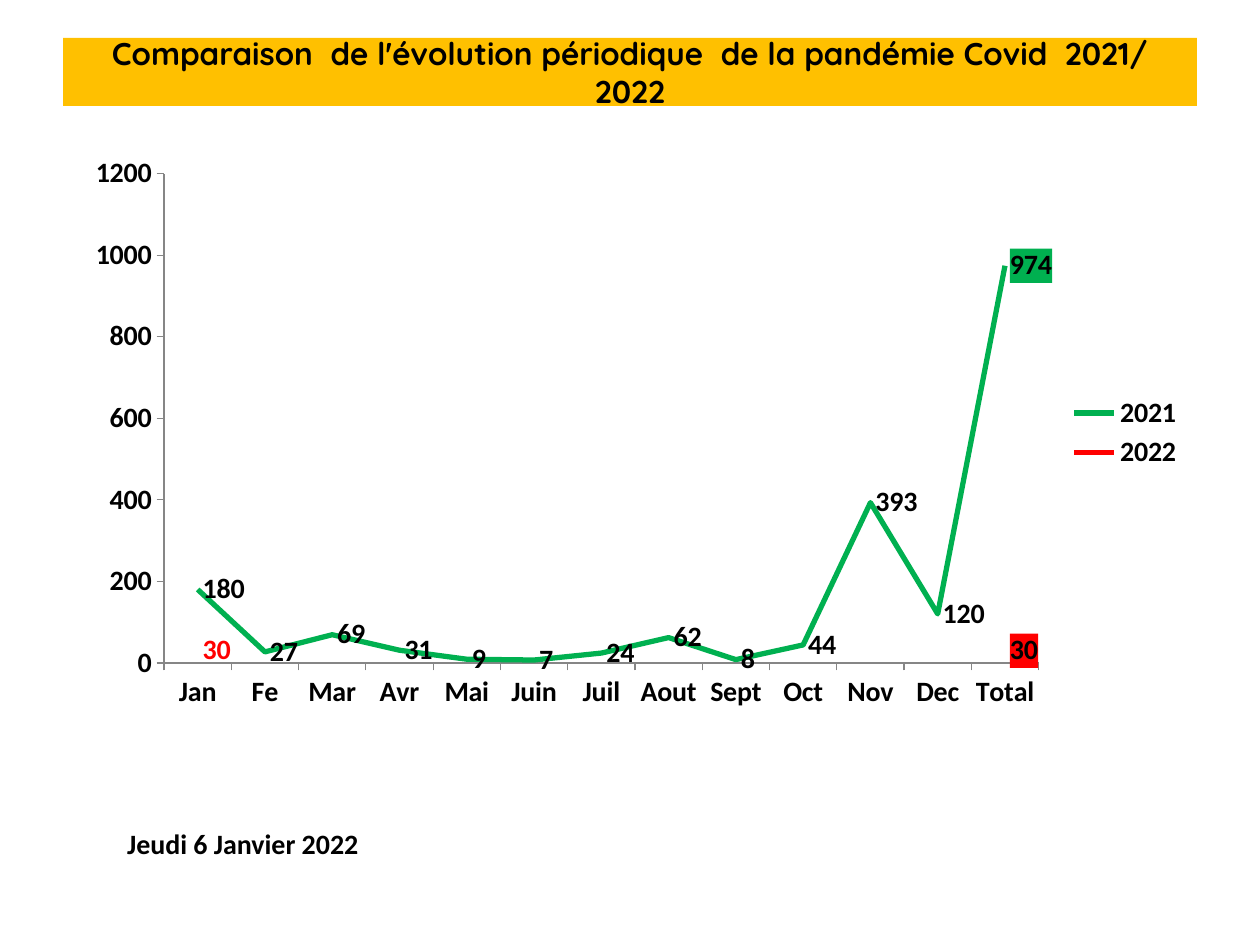
"""Build a slide with a line chart of monthly Covid cases, 2021 against 2022."""
from lxml.etree import SubElement
from pptx import Presentation
from pptx.chart.data import CategoryChartData
from pptx.dml.color import RGBColor
from pptx.enum.chart import (XL_CHART_TYPE, XL_LABEL_POSITION,
                             XL_LEGEND_POSITION, XL_MARKER_STYLE, XL_TICK_MARK)
from pptx.enum.text import MSO_ANCHOR, MSO_AUTO_SIZE, PP_ALIGN
from pptx.oxml import parse_xml
from pptx.oxml.ns import nsdecls, qn
from pptx.util import Pt

TITLE = "Comparaison  de l'évolution périodique  de la pandémie Covid  2021/ 2022"
DATE = "Jeudi 6 Janvier 2022"
MONTHS = ["Jan", "Fe", "Mar", "Avr", "Mai", "Juin", "Juil", "Aout", "Sept",
          "Oct", "Nov", "Dec", "Total"]
LAST = len(MONTHS) - 1
SERIES = [
    ("2021", [180, 27, 69, 31, 9, 7, 24, 62, 8, 44, 393, 120, 974], "00B050", "000000"),
    ("2022", [30] + [None] * (LAST - 1) + [30], "FF0000", "FF0000"),
]
PLOT = {"x": 0.08, "y": 0.05, "w": 0.78, "h": 0.85}
BODY = {"name": "Calibri", "size": Pt(16), "bold": True}
HEAD = {"name": "Quicksand", "size": Pt(18), "bold": True}


def tint(color, code):
    color.rgb = RGBColor.from_string(code)


def style(font, look, code="000000"):
    for key, value in look.items():
        setattr(font, key, value)
    tint(font.color, code)


def place(shape, *box):
    for key, value in zip(("left", "top", "width", "height"), box):
        setattr(shape, key, Pt(value))


def add_title(slide):
    shape = slide.shapes.title
    place(shape, 36, 21.6, 648, 38.9)
    shape.fill.solid()
    tint(shape.fill.fore_color, "FFC000")
    frame = shape.text_frame
    frame.text = TITLE
    frame.word_wrap = True
    frame.auto_size = MSO_AUTO_SIZE.NONE
    frame.vertical_anchor = MSO_ANCHOR.MIDDLE
    para = frame.paragraphs[0]
    para.alignment = PP_ALIGN.CENTER
    style(para.runs[0].font, HEAD)


def set_plot(chart):
    area = chart._chartSpace.find(".//" + qn("c:plotArea"))
    for old in area.findall(qn("c:layout")):
        area.remove(old)
    layout = parse_xml(f"<c:layout {nsdecls('c')}><c:manualLayout/></c:layout>")
    rules = [("layoutTarget", "inner"), ("xMode", "edge"), ("yMode", "edge")]
    for tag, value in rules + list(PLOT.items()):
        SubElement(layout[0], qn("c:" + tag)).set("val", str(value))
    area.insert(0, layout)


def fill_label(line, point, code):
    label = line.points[point].data_label
    style(label.font, BODY)
    label.position = XL_LABEL_POSITION.RIGHT
    text = line._element.find(f"{qn('c:dLbls')}/{qn('c:dLbl')}/{qn('c:txPr')}")
    text.addprevious(parse_xml(
        f"<c:spPr {nsdecls('c', 'a')}><a:solidFill>"
        f'<a:srgbClr val="{code}"/></a:solidFill></c:spPr>'))


def add_chart(slide):
    data = CategoryChartData()
    data.categories = MONTHS
    for name, values, _, _ in SERIES:
        data.add_series(name, values)
    chart = slide.shapes.add_chart(
        XL_CHART_TYPE.LINE, Pt(42.5), Pt(82.8), Pt(640.8), Pt(329), data).chart
    style(chart.font, BODY)
    chart.has_title = False
    chart.has_legend = True
    chart.legend.position = XL_LEGEND_POSITION.RIGHT
    chart.legend.include_in_layout = False
    chart.plots[0].vary_by_categories = False
    for axis in (chart.category_axis, chart.value_axis):
        axis.has_major_gridlines = False
        axis.major_tick_mark = XL_TICK_MARK.OUTSIDE
        axis.minor_tick_mark = XL_TICK_MARK.NONE
        axis.format.line.width = Pt(0.75)
        tint(axis.format.line.color, "868686")
    scale = {"minimum_scale": 0, "maximum_scale": 1200, "major_unit": 200}
    for key, value in scale.items():
        setattr(chart.value_axis, key, value)
    for line, (_, _, code, ink) in zip(chart.plots[0].series, SERIES):
        line.smooth = False
        line.marker.style = XL_MARKER_STYLE.NONE
        line.format.line.width = Pt(3)
        tint(line.format.line.color, code)
        labels = line.data_labels
        labels.show_value = True
        labels.position = XL_LABEL_POSITION.RIGHT
        style(labels.font, BODY, ink)
        fill_label(line, LAST, code)
    set_plot(chart)


def add_date(slide):
    box = slide.shapes.add_textbox(Pt(65.5), Pt(468.7), Pt(402.5), Pt(26.6))
    frame = box.text_frame
    frame.word_wrap = True
    frame.auto_size = MSO_AUTO_SIZE.SHAPE_TO_FIT_TEXT
    frame.text = DATE
    style(frame.paragraphs[0].runs[0].font, BODY)


def main():
    deck = Presentation()
    deck.slide_width, deck.slide_height = Pt(720), Pt(540)
    slide = deck.slides.add_slide(deck.slide_layouts[5])
    add_title(slide)
    add_chart(slide)
    add_date(slide)
    deck.save("out.pptx")


if __name__ == "__main__":
    main()
